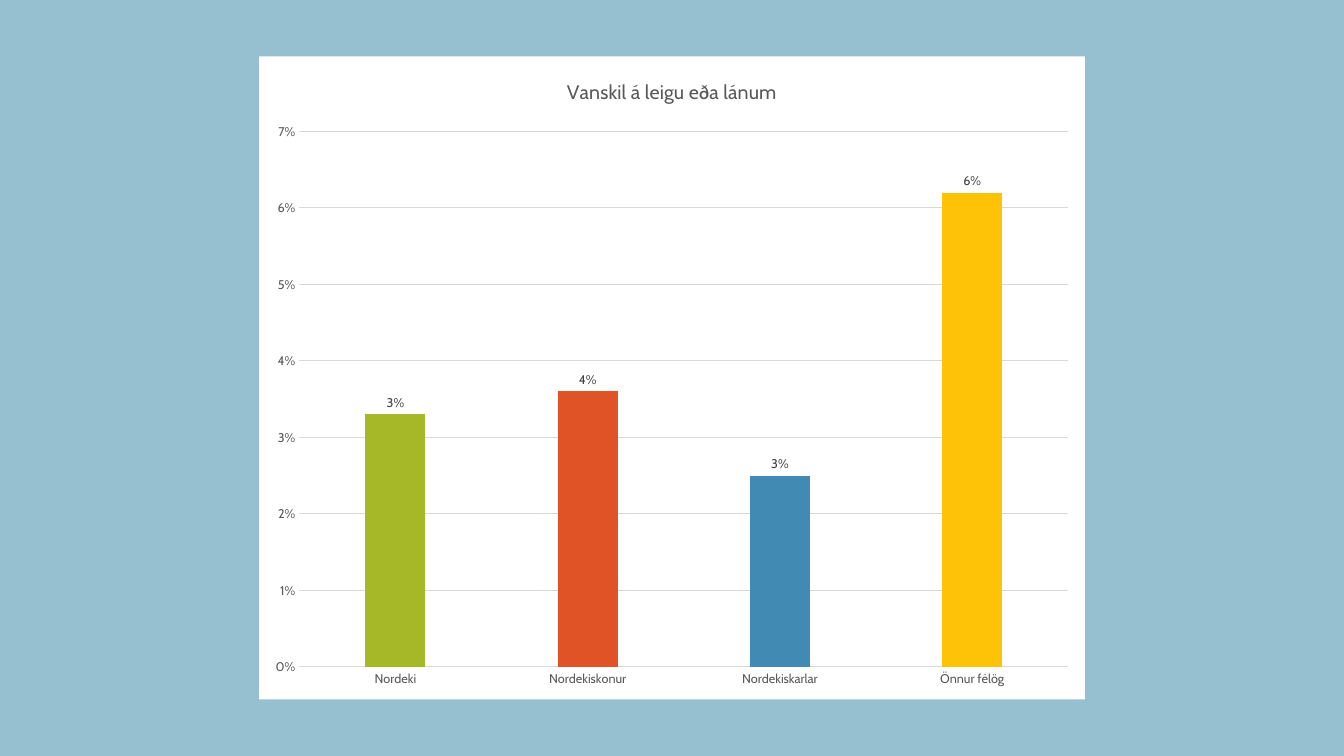
from dataclasses import dataclass

from pptx import Presentation
from pptx.chart.chart import Chart
from pptx.chart.data import CategoryChartData
from pptx.dml.color import RGBColor
from pptx.enum.chart import XL_CHART_TYPE, XL_LABEL_POSITION, XL_TICK_MARK
from pptx.oxml import parse_xml
from pptx.oxml.ns import nsdecls
from pptx.slide import Slide
from pptx.text.text import Font
from pptx.util import Inches, Pt

COLUMN = XL_CHART_TYPE.COLUMN_CLUSTERED
OUTSIDE = XL_LABEL_POSITION.OUTSIDE_END
NO_TICK = XL_TICK_MARK.NONE

FACE = "Cabin"
TITLE = "Vanskil á leigu eða lánum"
PERCENT = "0%"
GRAY = "595959"
PALE = "D9D9D9"


@dataclass
class Bar:
    name: str
    value: float
    color: str


BARS = [
    Bar("Nordeki", 0.033, "A6B727"),
    Bar("Nordekiskonur", 0.036, "DF5327"),
    Bar("Nordekiskarlar", 0.025, "418AB3"),
    Bar("Önnur félög", 0.062, "FEC306"),
]


def rgb(color: str) -> RGBColor:
    return RGBColor.from_string(color)


def style(font: Font, size: float, color: str) -> None:
    font.name = FACE
    font.size = Pt(size)
    font.bold = False
    font.color.rgb = rgb(color)


def fill_chart(chart: Chart, color: str) -> None:
    props = parse_xml(
        f'<c:spPr {nsdecls("c", "a")}><a:solidFill><a:srgbClr val="{color}"/>'
        "</a:solidFill><a:ln><a:noFill/></a:ln></c:spPr>"
    )
    chart.element.chart.addnext(props)


def set_title(chart: Chart) -> None:
    chart.has_title = True
    chart.chart_title.include_in_layout = False
    para = chart.chart_title.text_frame.paragraphs[0]
    para.text = TITLE
    style(para.font, 14, GRAY)


def set_axes(chart: Chart) -> None:
    for axis in (chart.category_axis, chart.value_axis):
        axis.major_tick_mark = NO_TICK
        axis.minor_tick_mark = NO_TICK
        style(axis.tick_labels.font, 9, GRAY)
    values = chart.value_axis
    values.minimum_scale = 0
    values.maximum_scale = 0.07
    values.major_unit = 0.01
    values.has_major_gridlines = True
    values.format.line.fill.background()
    values.tick_labels.number_format = PERCENT
    values.tick_labels.number_format_is_linked = False
    for item in (chart.category_axis, values.major_gridlines):
        item.format.line.color.rgb = rgb(PALE)
        item.format.line.width = Pt(0.75)


def set_bars(chart: Chart) -> None:
    plot = chart.plots[0]
    plot.gap_width = 219
    plot.overlap = -27
    plot.vary_by_categories = False
    series = plot.series[0]
    series.invert_if_negative = False
    for index, bar in enumerate(BARS):
        fill = series.points[index].format.fill
        fill.solid()
        fill.fore_color.rgb = rgb(bar.color)
    labels = series.data_labels
    labels.show_value = True
    labels.position = OUTSIDE
    labels.number_format = PERCENT
    labels.number_format_is_linked = False
    style(labels.font, 9, "404040")


def add_bars(slide: Slide) -> None:
    data = CategoryChartData(number_format=PERCENT)
    data.categories = [bar.name for bar in BARS]
    data.add_series(TITLE, [bar.value for bar in BARS])
    frame = slide.shapes.add_chart(
        COLUMN, Inches(2.57), Inches(0.56), Inches(8.19), Inches(6.38), data
    )
    chart = frame.chart
    chart.has_legend = False
    style(chart.font, 10, "000000")
    fill_chart(chart, "FFFFFF")
    set_title(chart)
    set_axes(chart)
    set_bars(chart)


def main() -> None:
    deck = Presentation()
    deck.slide_width = Inches(13.33)
    deck.slide_height = Inches(7.5)
    slide = deck.slides.add_slide(deck.slide_layouts[6])
    back = slide.background.fill
    back.solid()
    back.fore_color.rgb = rgb("96C0CF")
    add_bars(slide)
    deck.save("out.pptx")


if __name__ == "__main__":
    main()
